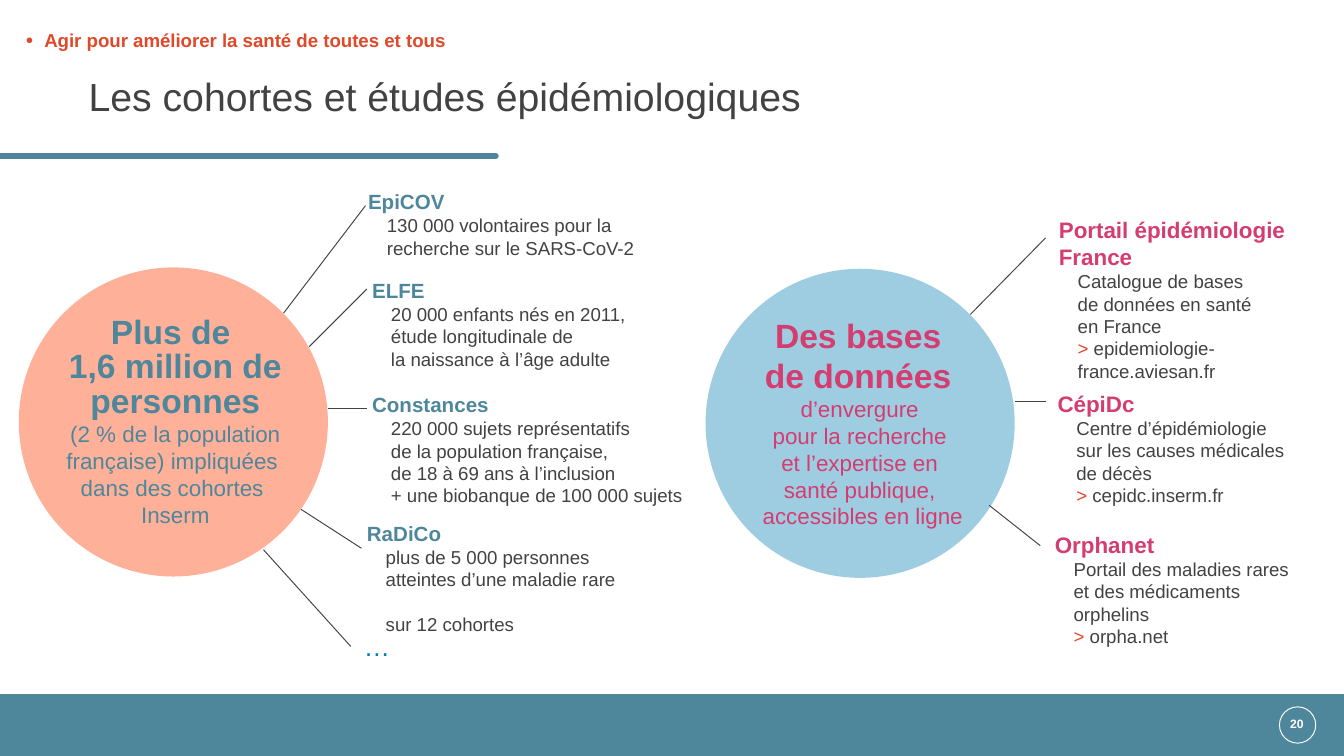
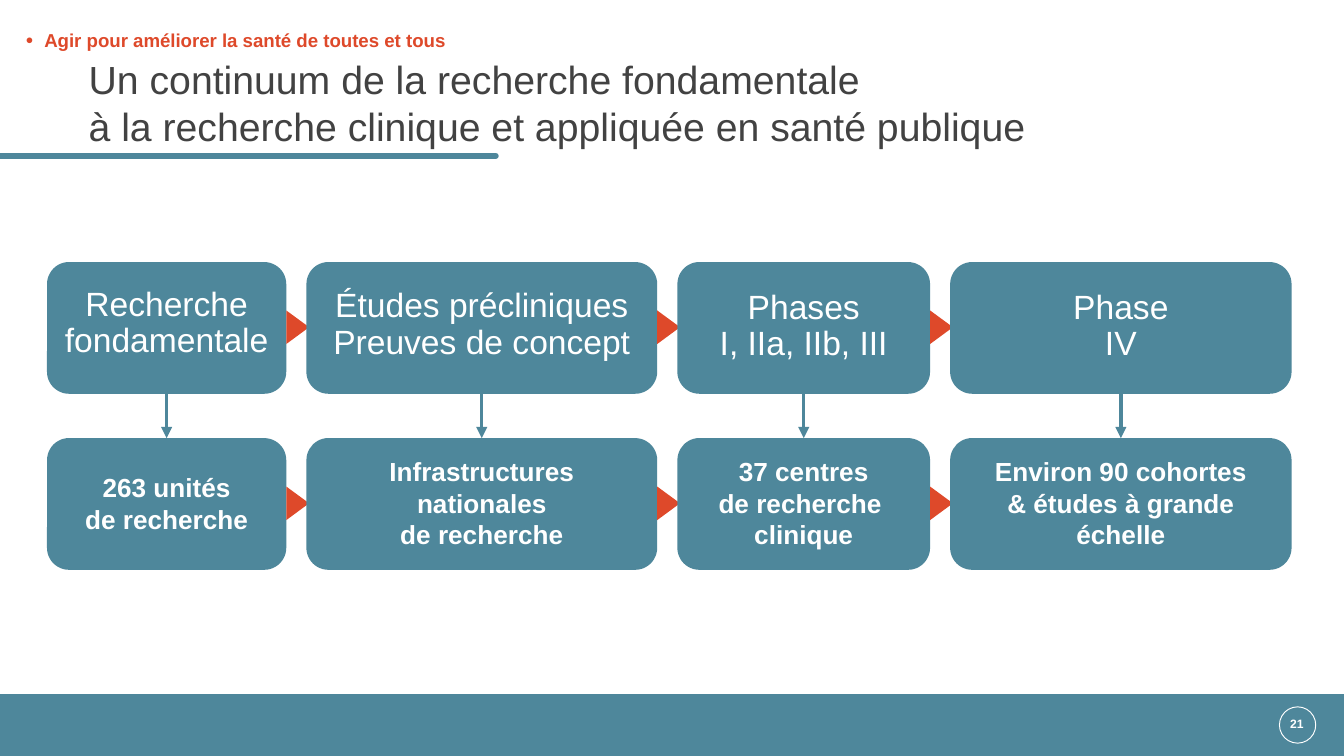
from lxml.etree import SubElement
from pptx import Presentation
from pptx.dml.color import RGBColor
from pptx.enum.shapes import MSO_CONNECTOR as Link, MSO_SHAPE as Kind
from pptx.enum.text import MSO_ANCHOR as Anchor, PP_ALIGN as Align
from pptx.oxml.ns import qn
from pptx.util import Inches, Pt

TEAL = RGBColor(0x4E, 0x87, 0x9B)
RED = RGBColor(0xDE, 0x49, 0x2A)
PINK = RGBColor(0xD5, 0x3C, 0x70)
BLUE = RGBColor(0x00, 0x7E, 0xB3)
FLAME = RGBColor(0xFF, 0x3A, 0x00)
GREY = RGBColor(0x42, 0x42, 0x42)
WHITE = RGBColor(0xFF, 0xFF, 0xFF)


def write(slide, place, paras, pad=0.0, mid=False, anchor=Anchor.TOP, space=None, bullet=False):
    frame = slide.shapes.add_textbox(*map(Inches, place)).text_frame
    frame.word_wrap = True
    frame.vertical_anchor = anchor
    frame.margin_left = frame.margin_right = Inches(pad)
    frame.margin_top = frame.margin_bottom = Inches(pad / 2)
    for i, (text, size, color, bold, left) in enumerate(paras):
        para = frame.add_paragraph() if i else frame.paragraphs[0]
        props = para._p.get_or_add_pPr()
        props.set("marL", str(Inches(left)))
        if bullet:
            props.set("indent", str(-Inches(left)))
            tint = SubElement(props, qn("a:buClr"))
            SubElement(tint, qn("a:srgbClr")).set("val", str(color))
            SubElement(props, qn("a:buSzPct")).set("val", "70000")
            SubElement(props, qn("a:buFont")).set("typeface", "Arial")
            SubElement(props, qn("a:buChar")).set("char", "●")
        para.alignment = Align.CENTER if mid else Align.LEFT
        if space:
            para.line_spacing = space
        para.font.name = "Arial"
        para.font.size = Pt(size)
        para.font.bold = bold
        if text.startswith("> "):
            for part, tone in (("> ", RED), (text[2:], color)):
                run = para.add_run()
                run.text = part
                run.font.color.rgb = tone
        else:
            para.text = text
            para.font.color.rgb = color
    return frame


def draw(slide, ends, color, width):
    line = slide.shapes.add_connector(Link.STRAIGHT, *map(Inches, ends))
    line.line.color.rgb = color
    line.line.width = Pt(width)
    SubElement(line._element.spPr, qn("a:effectLst"))
    return line


deck = Presentation()
deck.slide_width = Inches(10)
deck.slide_height = Inches(10) * 9 // 16

heads = [
    (20, 0.54, "Les cohortes et études épidémiologiques"),
    (21, 0.41, "Un continuum de la recherche fondamentale\n"
               "à la recherche clinique et appliquée en santé publique"),
]
slides = []
for num, top, head in heads:
    slide = deck.slides.add_slide(deck.slide_layouts[6])
    slides.append(slide)
    rule = draw(slide, (0, 1.16, 3.69, 1.16), TEAL, 3)
    rule.line._get_or_add_ln().set("cap", "rnd")
    deep = Inches(0.46)
    band = slide.shapes.add_shape(Kind.RECTANGLE, 0, deck.slide_height - deep, Inches(10), deep)
    band.shadow.inherit = False
    band.fill.solid()
    band.fill.fore_color.rgb = TEAL
    band.line.fill.background()
    ring = slide.shapes.add_shape(Kind.OVAL, Inches(9.52), Inches(5.26), Inches(0.27), Inches(0.27))
    ring.shadow.inherit = False
    ring.fill.background()
    ring.line.color.rgb = WHITE
    ring.line.width = Pt(0.5)
    write(slide, (0.19, 0.23, 6.2, 0.31),
          [("Agir pour améliorer la santé de toutes et tous", 10, RED, True, 0.14)],
          space=0.9, bullet=True)
    write(slide, (9.31, 5.28, 0.68, 0.24), [(str(num), 6.5, WHITE, True, 0)], pad=0.1, mid=True)
    write(slide, (0.66, top, 7.34, 0.71), [(head, 21, GREY, False, 0)])

study, flow = slides

for ends in [
    (2.73, 3.04, 2.44, 3.04), (2.73, 2.15, 2.3, 2.58), (2.11, 2.33, 2.72, 1.53),
    (2.69, 4.08, 2.24, 3.79), (2.61, 4.81, 1.96, 4.09), (7.78, 2.99, 7.55, 2.99),
    (7.22, 2.34, 7.78, 1.77), (7.74, 4.06, 7.36, 3.76),
]:
    draw(study, ends, GREY, 0.5)

for left, top, color, alpha in ((0.14, 1.99, FLAME, 40), (5.25, 2, BLUE, 38)):
    disc = study.shapes.add_shape(Kind.OVAL, Inches(left), Inches(top), Inches(2.3), Inches(2.3))
    disc.shadow.inherit = False
    disc.fill.solid()
    disc.fill.fore_color.rgb = color
    disc.line.fill.background()
    tint = disc._element.spPr.find(qn("a:solidFill"))[0]
    SubElement(tint, qn("a:alpha")).set("val", str(alpha * 1000))

crowd = write(study, (0.29, 2.47, 2.03, 1.34), [
    ("Plus de \n1,6 million de\npersonnes", 18, TEAL, True, 0),
    ("(2 % de la population française) impliquées \ndans des cohortes \nInserm", 12, TEAL, False, 0),
], mid=True, anchor=Anchor.MIDDLE)
crowd.paragraphs[0].line_spacing = Pt(18.6)
write(study, (5.46, 1.99, 1.92, 2.3), [
    ("Des bases \nde données ", 18, PINK, True, 0),
    ("d’envergure \npour la recherche \net l’expertise en \nsanté publique, \naccessibles en ligne",
     12, PINK, False, 0),
], mid=True, anchor=Anchor.MIDDLE)

notes = [
    (2.64, 1.36, 2.49, 0.62, TEAL, 11, "EpiCOV",
     ["130 000 volontaires pour la recherche sur le SARS-CoV-2"]),
    (2.67, 2.02, 2.21, 0.79, TEAL, 11, "ELFE",
     ["20 000 enfants nés en 2011, étude longitudinale de \nla naissance à l’âge adulte"]),
    (2.67, 2.87, 2.58, 0.96, TEAL, 11, "Constances",
     ["220 000 sujets représentatifs \nde la population française,\nde 18 à 69 ans à l’inclusion",
      "+ une biobanque de 100 000 sujets"]),
    (7.78, 1.56, 1.92, 1.35, PINK, 12, "Portail épidémiologie France",
     ["Catalogue de bases \nde données en santé \nen France",
      "> epidemiologie-france.aviesan.fr"]),
    (7.77, 2.85, 1.92, 0.98, PINK, 12, "CépiDc",
     ["Centre d’épidémiologie \nsur les causes médicales de décès", "> cepidc.inserm.fr"]),
    (7.75, 3.9, 2.05, 0.98, PINK, 12, "Orphanet",
     ["Portail des maladies rares et des médicaments orphelins", "> orpha.net"]),
]
for *place, color, size, name, body in notes:
    paras = [(name, size, color, True, 0)] + [(text, 10, GREY, False, 0.14) for text in body]
    write(study, place, paras, pad=0.1)

rare = write(study, (2.73, 3.88, 1.88, 0.84), [
    ("RaDiCo", 11, TEAL, True, 0),
    ("plus de 5 000 personnes atteintes d’une maladie rare", 10, GREY, False, 0.14),
    ("sur 12 cohortes", 10, GREY, False, 0.14),
], anchor=Anchor.MIDDLE)
rare.paragraphs[2].space_before = Pt(12)
write(study, (2.61, 4.64, 0.4, 0.34), [("…", 14, BLUE, False, 0)], pad=0.1)

GAP, HIGH = 0.15, 0.98
ROWS = (1.95, 3.26)
steps = [
    (1.78, 2.14, "Recherche\nfondamentale", 3.46, ["263 unités\nde recherche"]),
    (2.61, 2.15, "Études précliniques\nPreuves de concept", 3.34,
     ["Infrastructures\nnationales\nde recherche"]),
    (1.88, 2.16, "Phases\nI, IIa, IIb, III", 3.34, ["37 centres", "de recherche \nclinique"]),
    (2.54, 2.16, "Phase\nIV", 3.34, ["Environ 90 cohortes\n& études à grande échelle"]),
]
left = 0.35
for i, (wide, high, phase, low, means) in enumerate(steps):
    pair = []
    for top in ROWS:
        box = flow.shapes.add_shape(Kind.ROUNDED_RECTANGLE, *map(Inches, (left, top, wide, HIGH)))
        pair.append(box)
        marks = [(box, TEAL)]
        if i < len(steps) - 1:
            tip = flow.shapes.add_shape(Kind.ISOSCELES_TRIANGLE, Inches(left + wide - 0.04),
                                        Inches(top + 0.4), Inches(0.25), Inches(0.17))
            tip.rotation = 90
            marks.append((tip, RED))
        for mark, color in marks:
            mark.shadow.inherit = False
            mark.fill.solid()
            mark.fill.fore_color.rgb = color
            mark.line.fill.background()
    write(flow, (left, high, wide, 0.63), [(phase, 18, WHITE, False, 0)], mid=True, space=0.9)
    write(flow, (left, low, wide, 0.81), [(text, 14, WHITE, True, 0) for text in means],
          pad=0.1, mid=True)
    x = left + wide / 2
    arrow = draw(flow, (x, ROWS[0] + HIGH, x, ROWS[1]), TEAL, 1.75)
    arrow.begin_connect(pair[0], 2)
    arrow.end_connect(pair[1], 0)
    SubElement(arrow.line._get_or_add_ln(), qn("a:tailEnd")).set("type", "triangle")
    left += wide + GAP

deck.save("out.pptx")
